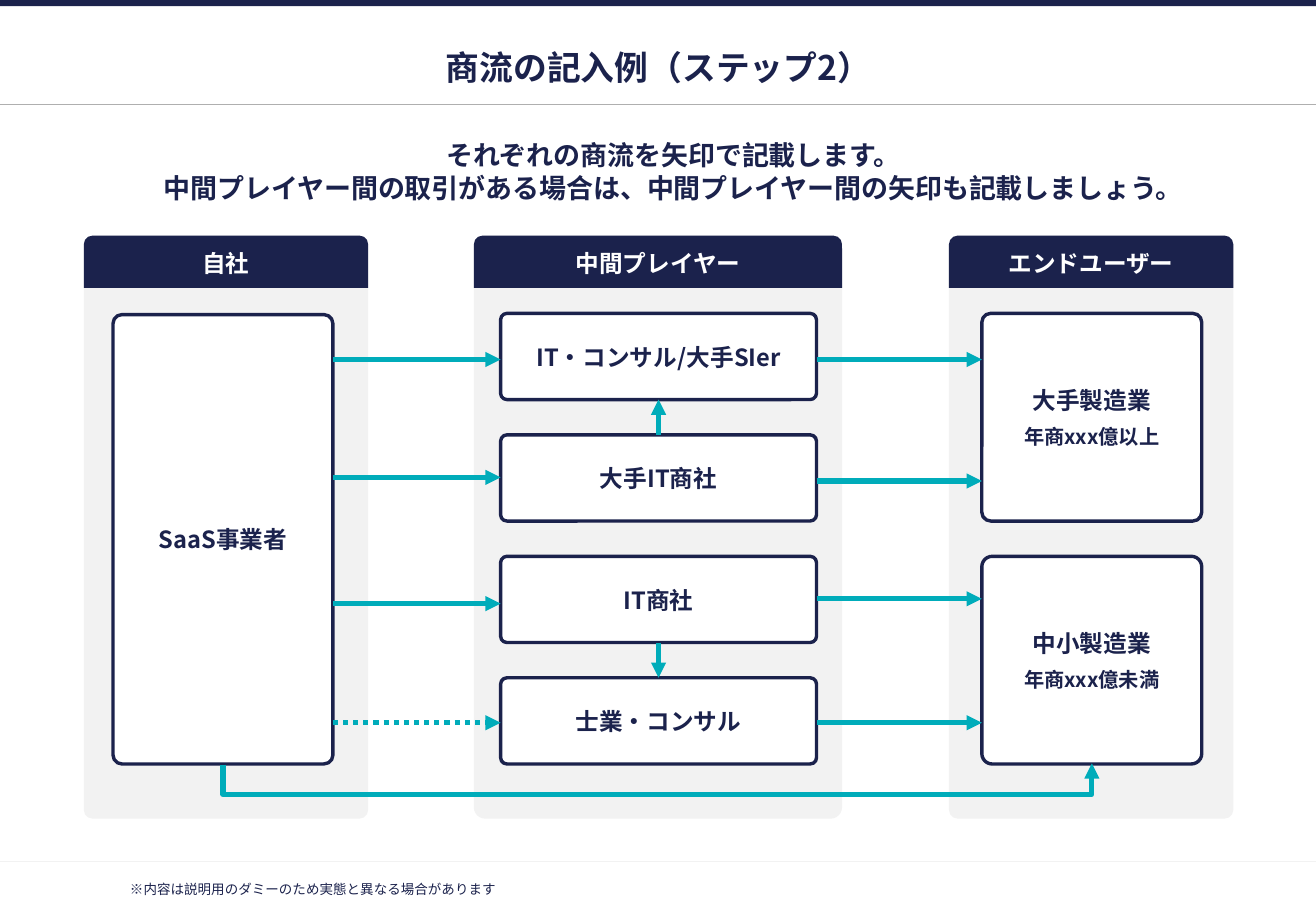
from lxml import etree
from pptx import Presentation
from pptx import util as u
from pptx.dml.color import RGBColor
from pptx.enum import dml, shapes, text
from pptx.oxml.ns import qn

NAVY = RGBColor(0x1B, 0x22, 0x4C)
TEAL = RGBColor(0x00, 0xAC, 0xBA)
PALE = RGBColor(0xF2, 0xF2, 0xF2)
GRAY = RGBColor(0xAF, 0xAF, 0xAF)
WHITE = RGBColor(0xFF, 0xFF, 0xFF)
FONT = "Noto Sans CJK JP"
WIDE, HIGH = 10.83, 7.5

TITLE = "商流の記入例（ステップ2）"
LEAD = [
    "それぞれの商流を矢印で記載します。",
    "中間プレイヤー間の取引がある場合は、中間プレイヤー間の矢印も記載しましょう。",
]
NOTE = "※内容は説明用のダミーのため実態と異なる場合があります"
COLS = [("自社", 0.69, 2.34), ("中間プレイヤー", 3.9, 3.03), ("エンドユーザー", 7.81, 2.34)]
MAKER = "SaaS事業者"
AGENTS = ["IT・コンサル/大手SIer", "大手IT商社", "IT商社", "士業・コンサル"]
USERS = [
    (["大手製造業", "年商xxx億以上"], 0.043),
    (["中小製造業", "年商xxx億未満"], 0.05),
]
SALES = [(2.96, False), (3.93, False), (4.97, False), (5.95, True)]
RESALES = [2.96, 3.96, 4.93, 5.95]

COL_TOP, COL_HIGH, HEAD_HIGH = 1.94, 4.8, 0.43
BOX_TOP, STEP, AGENT_HIGH = 2.58, 1.0, 0.71
MAKER_LEFT, AGENT_LEFT, USER_LEFT = 0.93, 4.12, 8.08
SIDE_WIDE, AGENT_WIDE = 1.81, 2.6
USER_HIGH = STEP + AGENT_HIGH
MAKER_HIGH = 3 * STEP + AGENT_HIGH - 0.01
DROP, THIN = 0.25, 0.01

deck = Presentation()
deck.slide_width, deck.slide_height = u.Inches(WIDE), u.Inches(HIGH)
slide = deck.slides.add_slide(deck.slide_layouts[6])


def write(frame, lines, sizes=(14,), color=NAVY, bold=True, after=0,
          align=text.PP_ALIGN.CENTER, anchor=text.MSO_ANCHOR.MIDDLE, hang=False):
    frame.word_wrap = True
    frame.vertical_anchor = anchor
    frame.margin_left = frame.margin_right = u.Inches(0.04)
    frame.margin_top = frame.margin_bottom = u.Inches(0.04)
    for i, line in enumerate(lines):
        para = frame.paragraphs[0] if i == 0 else frame.add_paragraph()
        size = sizes[min(i, len(sizes) - 1)]
        para.alignment = align
        para.line_spacing = u.Pt(round(size * 1.22, 1))
        para.space_after = u.Pt(after)
        if hang:
            props = para._p.get_or_add_pPr()
            props.set("marL", str(u.Inches(0.5)))
            props.set("indent", str(u.Inches(-0.25)))
        run = para.add_run()
        run.text = line
        font = run.font
        font.name, font.size, font.bold = FONT, u.Pt(size), bold
        font.color.rgb = color
        east = etree.SubElement(run._r.get_or_add_rPr(), qn("a:ea"))
        east.set("typeface", FONT)


def label(place, lines, **style):
    box = slide.shapes.add_textbox(*map(u.Inches, place))
    write(box.text_frame, lines, **style)


def block(kind, place, fill, edge=None, adj=None):
    shape = slide.shapes.add_shape(kind, *map(u.Inches, place))
    shape.shadow.inherit = False
    shape.fill.solid()
    shape.fill.fore_color.rgb = fill
    if edge is None:
        shape.line.fill.background()
    else:
        shape.line.color.rgb = edge
        shape.line.width = u.Pt(2)
    if adj is not None:
        shape.adjustments[0] = adj
    return shape


def card(place, lines, adj, **style):
    shape = block(shapes.MSO_SHAPE.ROUNDED_RECTANGLE, place, WHITE, NAVY, adj)
    write(shape.text_frame, lines, **style)
    return shape


def link(start, end, color=TEAL, width=3, arrow=True, dots=False,
         kind=shapes.MSO_CONNECTOR.STRAIGHT):
    line = slide.shapes.add_connector(kind, *map(u.Inches, start + end))
    line.line.color.rgb = color
    line.line.width = u.Pt(width)
    if dots:
        line.line.dash_style = dml.MSO_LINE.ROUND_DOT
        line.line._ln.find(qn("a:prstDash")).set("val", "sysDot")
    if arrow:
        tail = etree.SubElement(line.line._ln, qn("a:tailEnd"))
        tail.set("type", "triangle")
    etree.SubElement(line._element.spPr, qn("a:effectLst"))
    return line


def join(first, out, last, into, **style):
    line = link((0, 0), (0, 0), **style)
    line.begin_connect(first, out)
    line.end_connect(last, into)
    return line


def main():
    link((0, 7.09), (WIDE, 7.09), color=PALE, width=0.75, arrow=False)
    block(shapes.MSO_SHAPE.RECTANGLE, (0, 0, WIDE, 0.05), NAVY)
    link((0, 0.86), (WIDE, 0.86), color=GRAY, width=0.75, arrow=False)
    label((0.69, 1.1, 9.46, 0.65), LEAD, sizes=(16,), hang=True,
          anchor=text.MSO_ANCHOR.TOP)
    label((0.69, 0.34, 9.46, 0.42), [TITLE], sizes=(20,))

    for name, left, wide in COLS:
        block(shapes.MSO_SHAPE.ROUNDED_RECTANGLE,
              (left, COL_TOP, wide, COL_HIGH), PALE, adj=0.031)
        head = block(shapes.MSO_SHAPE.ROUND_2_SAME_RECTANGLE,
                     (left, COL_TOP, wide, HEAD_HIGH), NAVY)
        write(head.text_frame, [name], color=WHITE)

    maker = card((MAKER_LEFT, BOX_TOP + 0.01, SIDE_WIDE, MAKER_HIGH), [MAKER], 0.041, after=6)
    agents = [
        card((AGENT_LEFT, BOX_TOP + i * STEP, AGENT_WIDE, AGENT_HIGH), [name], 0.074, after=4)
        for i, name in enumerate(AGENTS)
    ]
    users = [
        card((USER_LEFT, BOX_TOP + i * 2 * STEP, SIDE_WIDE, USER_HIGH), lines, adj,
             sizes=(14, 12), after=6)
        for i, (lines, adj) in enumerate(USERS)
    ]

    for y, dots in SALES:
        link((MAKER_LEFT + SIDE_WIDE, y), (AGENT_LEFT, y), dots=dots)
    for y in RESALES:
        link((AGENT_LEFT + AGENT_WIDE, y), (USER_LEFT, y))
    join(agents[1], 0, agents[0], 2)
    join(agents[2], 2, agents[3], 0)

    direct = join(maker, 2, users[1], 0 + 2, kind=shapes.MSO_CONNECTOR.ELBOW)
    span = USER_LEFT - MAKER_LEFT
    middle = (MAKER_LEFT + USER_LEFT + SIDE_WIDE) / 2
    base = BOX_TOP + 3 * STEP + AGENT_HIGH
    direct.left, direct.top = u.Inches(middle - THIN / 2), u.Inches(base - span / 2)
    direct.width, direct.height = u.Inches(THIN), u.Inches(span)
    frame = direct._element.spPr.find(qn("a:xfrm"))
    for key, value in (("rot", "5400000"), ("flipH", "1"), ("flipV", "1")):
        frame.set(key, value)
    shape = direct._element.spPr.find(qn("a:prstGeom"))
    guides = shape.find(qn("a:avLst"))
    guide = etree.SubElement(guides, qn("a:gd"))
    guide.set("name", "adj1")
    guide.set("fmla", f"val {round(-DROP / THIN * 100000)}")

    label((1.03, 7.21, 7.87, 0.2), [NOTE], sizes=(8,), bold=False,
          align=text.PP_ALIGN.LEFT, anchor=text.MSO_ANCHOR.TOP)
    deck.save("out.pptx")


if __name__ == "__main__":
    main()
